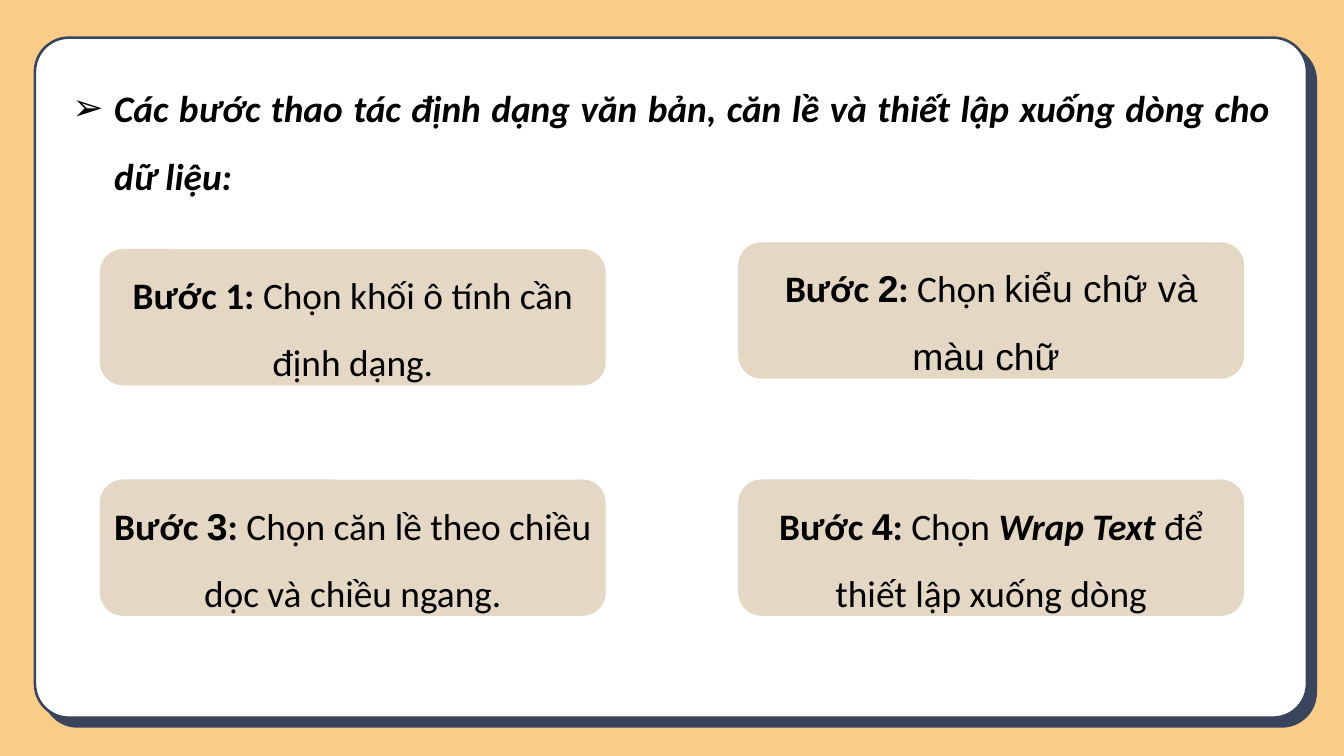
from collections import namedtuple

from lxml import etree
from pptx import Presentation
from pptx.dml.color import RGBColor
from pptx.enum.shapes import MSO_SHAPE
from pptx.enum.text import MSO_ANCHOR, PP_ALIGN
from pptx.oxml.ns import qn
from pptx.util import Inches, Pt

ROUNDED = MSO_SHAPE.ROUNDED_RECTANGLE
MIDDLE = MSO_ANCHOR.MIDDLE
CENTER, JUSTIFY = PP_ALIGN.CENTER, PP_ALIGN.JUSTIFY

COLUMNS, ROWS = 20, 11.25
CELL = Inches(1)
COLORS = {"background": "F9CC88", "frame": "38455D", "card": "FFFFFF",
          "step": "E4D7C4", "text": "000000"}
BODY, ALTERNATE = "Calibri", "Arial"

Box = namedtuple("Box", "left top width height")
Span = namedtuple("Span", "text font bold italic", defaults=(BODY, False, False))

HEADING = [Span("Các bước thao tác định dạng văn bản, căn lề và thiết lập "
                "xuống dòng cho dữ liệu: ", bold=True, italic=True)]
STEPS = [
    (BODY, [Span("Chọn khối ô tính cần định dạng.")]),
    (ALTERNATE, [Span("Chọn "), Span("kiểu chữ và màu chữ ", ALTERNATE)]),
    (ALTERNATE, [Span("Chọn căn lề theo chiều dọc và chiều ngang.")]),
    (ALTERNATE, [Span("Chọn "), Span("Wrap Text ", bold=True, italic=True),
                 Span("để thiết lập xuống dòng")]),
]
STEP_LEFTS = (1.5, 11)
STEP_TOPS = ((3.72, 3.62), (7.15, 7.15))
STEP_SIZE = (7.5, 2)


def color(name):
    return RGBColor.from_string(COLORS[name])


def place(box):
    return [round(length * CELL) for length in box]


def add_rounded(page, box, fill, line, line_width):
    shape = page.shapes.add_shape(ROUNDED, *place(box))
    shape.shadow.inherit = False
    shape.fill.solid()
    shape.fill.fore_color.rgb = color(fill)
    shape.line.color.rgb = color(line)
    shape.line.width = Pt(line_width)
    return shape


def write(para, spans, alignment):
    para.alignment = alignment
    para.line_spacing = 1.5
    for span in spans:
        run = para.add_run()
        run.text = span.text
        run.font.name = span.font
        run.font.size = Pt(40)
        run.font.bold = span.bold
        run.font.italic = span.italic
        run.font.color.rgb = color("text")


def add_card(page, box, offset):
    back = Box(box.left + offset, box.top + offset, box.width, box.height)
    for area, fill in ((back, "frame"), (box, "card")):
        card = add_rounded(page, area, fill, "frame", 2.75)
        card.adjustments[0] = 0.05


def add_heading(page, box):
    heading = page.shapes.add_textbox(*place(box))
    heading.text_frame.word_wrap = True
    para = heading.text_frame.paragraphs[0]
    write(para, HEADING, JUSTIFY)
    properties = para._p.get_or_add_pPr()
    indent = Inches(0.62)
    properties.set("marL", str(indent))
    properties.set("indent", str(-indent))
    etree.SubElement(properties, qn("a:buFont")).set("typeface", "Wingdings")
    properties[-1].set("typeface", ALTERNATE)
    etree.SubElement(properties, qn("a:buChar")).set("char", "➢")


def add_step(page, box, number, number_font, spans):
    step = add_rounded(page, box, "step", "step", 2)
    frame = step.text_frame
    frame.word_wrap = True
    frame.vertical_anchor = MIDDLE
    label = [Span("Bước ", bold=True), Span(str(number), number_font, True),
             Span(": ", bold=True)]
    write(frame.paragraphs[0], label + spans, CENTER)


def main():
    deck = Presentation()
    deck.slide_width, deck.slide_height = round(COLUMNS * CELL), round(ROWS * CELL)
    page = deck.slides.add_slide(deck.slide_layouts[6])
    page.background.fill.solid()
    page.background.fill.fore_color.rgb = color("background")

    add_card(page, Box(0.52, 0.56, 18.93, 10.12), 0.13)
    add_heading(page, Box(0.98, 0.89, 18.02, 2.01))
    for index, (number_font, spans) in enumerate(STEPS):
        row, column = divmod(index, len(STEP_LEFTS))
        box = Box(STEP_LEFTS[column], STEP_TOPS[row][column], *STEP_SIZE)
        add_step(page, box, index + 1, number_font, spans)

    deck.save("out.pptx")


if __name__ == "__main__":
    main()
